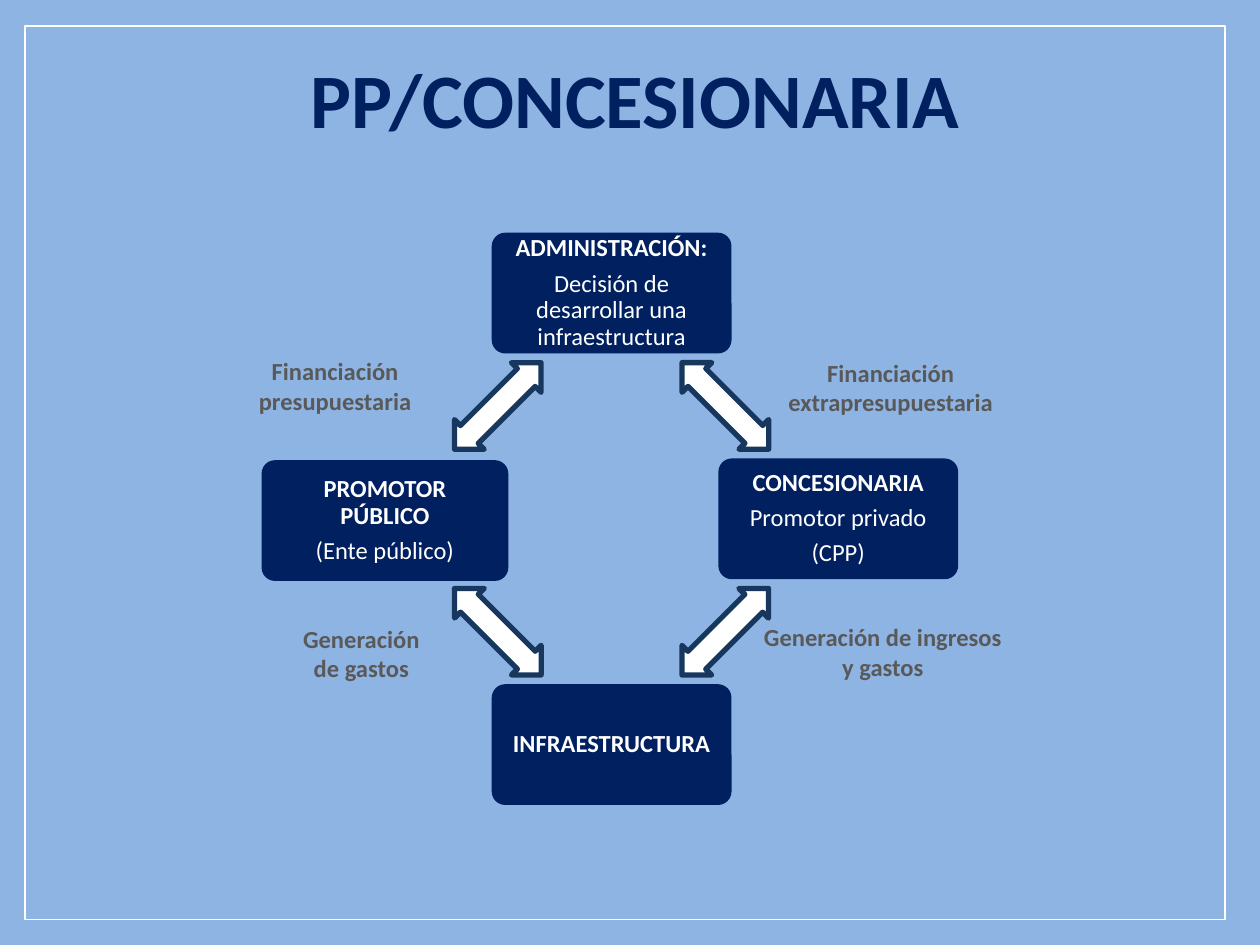
"""Builds the slide on the public promoter and concessionaire scheme."""
from pptx import Presentation
from pptx.dml.color import RGBColor
from pptx.enum.shapes import MSO_SHAPE
from pptx.enum.text import MSO_ANCHOR, MSO_AUTO_SIZE, PP_ALIGN
from pptx.util import Pt

NAVY, EDGE, GREY, WHITE, SKY = "002060", "17375E", "595959", "FFFFFF", "8EB4E3"


def color(hex_code):
    return RGBColor.from_string(hex_code)


class Scheme:
    font = "Calibri"
    size = 14

    def __init__(self, deck):
        self.slide = deck.slides.add_slide(deck.slide_layouts[5])
        background = self.slide.background.fill
        background.solid()
        background.fore_color.rgb = color(SKY)

    def add_lines(self, frame, lines, ink, size=size, bold_lines=None):
        frame.word_wrap = True
        for index, line in enumerate(lines):
            paragraph = frame.paragraphs[0] if index == 0 else frame.add_paragraph()
            paragraph.alignment = PP_ALIGN.CENTER
            run = paragraph.add_run()
            run.text = line
            run.font.name = self.font
            run.font.size = Pt(size)
            run.font.bold = bold_lines is None or index < bold_lines
            run.font.color.rgb = color(ink)

    def outline(self, preset, left, top, width, height, fill, line, weight):
        shape = self.slide.shapes.add_shape(
            preset, Pt(left), Pt(top), Pt(width), Pt(height))
        shape.shadow.inherit = False
        if fill:
            shape.fill.solid()
            shape.fill.fore_color.rgb = color(fill)
        else:
            shape.fill.background()
        shape.line.color.rgb = color(line)
        shape.line.width = Pt(weight)
        return shape

    def title(self, text, left, top, width, height):
        heading = self.slide.shapes.title
        heading.left, heading.top = Pt(left), Pt(top)
        heading.width, heading.height = Pt(width), Pt(height)
        frame = heading.text_frame
        frame.auto_size = MSO_AUTO_SIZE.SHAPE_TO_FIT_TEXT
        frame.vertical_anchor = MSO_ANCHOR.TOP
        self.add_lines(frame, [text], NAVY, size=44)

    def actor(self, left, top, width, lines):
        box = self.outline(MSO_SHAPE.ROUNDED_RECTANGLE, left, top, width, 67,
                           NAVY, NAVY, 2)
        box.adjustments[0] = 0.1
        frame = box.text_frame
        frame.vertical_anchor = MSO_ANCHOR.MIDDLE
        frame.margin_left = frame.margin_right = Pt(5.8)
        frame.margin_top = frame.margin_bottom = Pt(5.8)
        self.add_lines(frame, lines, WHITE, bold_lines=1)
        for paragraph in frame.paragraphs:
            paragraph.line_spacing = 0.9
            paragraph.space_after = Pt(5)

    def exchange(self, center_x, center_y, angle, length=70, breadth=24):
        arrow = self.outline(MSO_SHAPE.LEFT_RIGHT_ARROW, center_x - length / 2,
                             center_y - breadth / 2, length, breadth,
                             WHITE, EDGE, 3)
        arrow.adjustments[0] = 0.6
        arrow.adjustments[1] = 0.5
        arrow.rotation = angle

    def label(self, left, top, width, lines):
        box = self.slide.shapes.add_textbox(Pt(left), Pt(top), Pt(width), Pt(41))
        box.text_frame.auto_size = MSO_AUTO_SIZE.SHAPE_TO_FIT_TEXT
        self.add_lines(box.text_frame, lines, GREY)

    def border(self, left, top, width, height):
        self.outline(MSO_SHAPE.RECTANGLE, left, top, width, height, None, WHITE, 1)


def main():
    deck = Presentation()
    deck.slide_width, deck.slide_height = Pt(720), Pt(540)
    scheme = Scheme(deck)
    scheme.title("PP/CONCESIONARIA", 42.5, 26, 641, 60.5)

    scheme.actor(282, 134, 135, [
        "ADMINISTRACIÓN:", "Decisión de desarrollar una infraestructura"])
    scheme.actor(411.5, 263, 135, ["CONCESIONARIA", "Promotor privado", "(CPP)"])
    scheme.actor(282, 392, 135, ["INFRAESTRUCTURA"])
    scheme.actor(150.5, 264, 139, ["PROMOTOR PÚBLICO", "(Ente público)"])

    for side in (-1, 1):
        for level in (-1, 1):
            angle = 315 if side == level else 45
            scheme.exchange(349.5 + 65 * side, 296.5 + 64.5 * level, angle)

    scheme.label(122.5, 200, 138, ["Financiación", "presupuestaria"])
    scheme.label(417.5, 201, 183, ["Financiación", "extrapresupuestaria"])
    scheme.label(137.5, 353, 138, ["Generación", "de gastos"])
    scheme.label(424, 352, 161, ["Generación de ingresos", "y gastos"])
    scheme.border(14.2, 15, 686, 510.5)
    deck.save("out.pptx")


if __name__ == "__main__":
    main()
